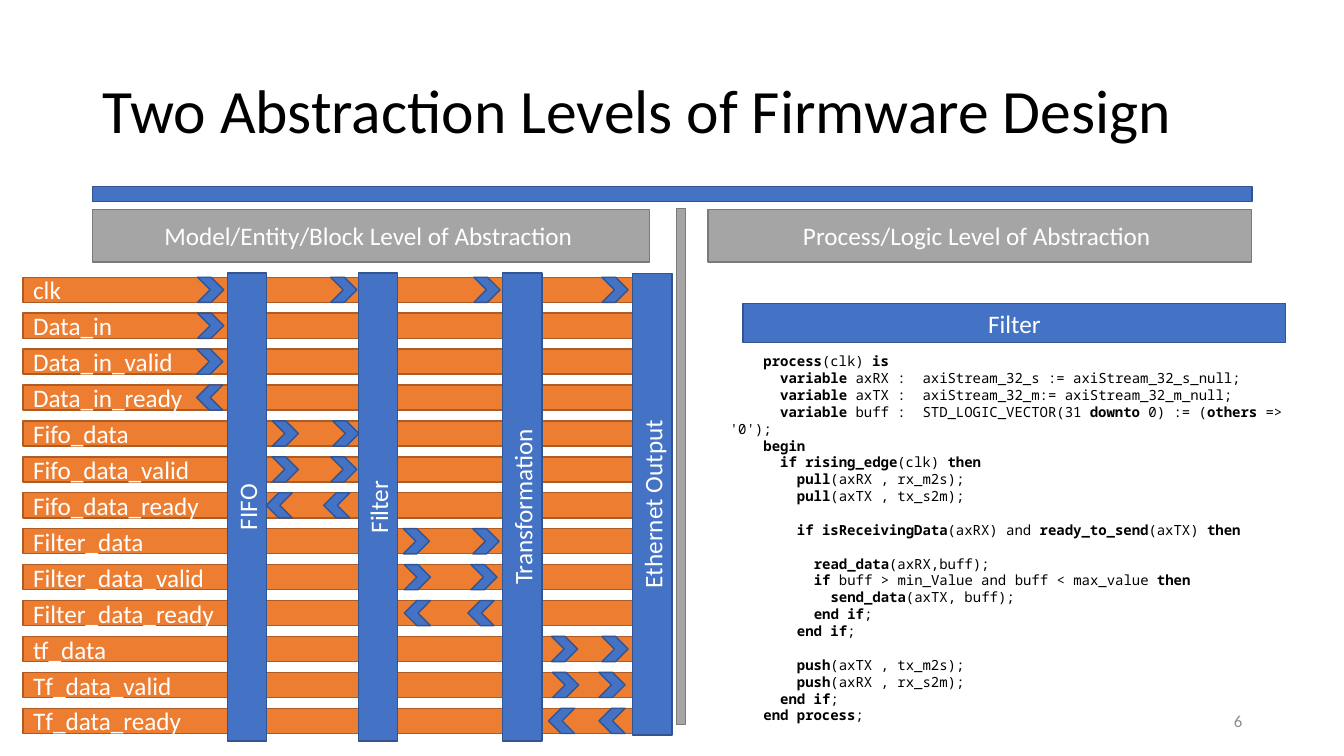
"""Builds the slide on two abstraction levels of firmware design."""
from dataclasses import dataclass

import pptx
import pptx.dml.color
import pptx.enum.shapes
import pptx.enum.text
import pptx.util

Inches, Pt = pptx.util.Inches, pptx.util.Pt
Shape = pptx.enum.shapes.MSO_SHAPE
Align = pptx.enum.text.PP_ALIGN
Anchor = pptx.enum.text.MSO_ANCHOR

TITLE = "Two Abstraction Levels of Firmware Design"
PAGE_NUMBER = "6"
HEADERS = [
    ("Model/Entity/Block Level of Abstraction ", 0.92, 5.52),
    ("Process/Logic Level of Abstraction ", 7.02, 5.39),
]
FORWARD, BACKWARD = 0, 180
SIGNALS = [
    ("clk", FORWARD, [1.96, 3.28, 4.7, 5.97]),
    ("Data_in", FORWARD, [1.96]),
    ("Data_in_valid", FORWARD, [1.95]),
    ("Data_in_ready", BACKWARD, [1.95]),
    ("Fifo_data", FORWARD, [2.7, 3.3]),
    ("Fifo_data_valid", FORWARD, [2.7, 3.28]),
    ("Fifo_data_ready", BACKWARD, [2.64, 3.21]),
    ("Filter_data", FORWARD, [4, 4.69]),
    ("Filter_data_valid", FORWARD, [4.01, 4.67]),
    ("Filter_data_ready", BACKWARD, [4.01, 4.64]),
    ("tf_data", FORWARD, [5.47, 5.97]),
    ("Tf_data_valid", FORWARD, [5.48, 5.94]),
    ("Tf_data_ready", BACKWARD, [5.44, 5.94]),
]
BLOCKS = [
    ("FIFO", 2.45, 4.64),
    ("Filter", 3.75, 4.64),
    ("Transformation", 5.18, 4.64),
    ("Ethernet Output", 6.47, 4.58),
]
CODE_TITLE = "Filter"
CODE = [
    (4, 0, "*process*(clk) *is*"),
    (6, 0, "*variable* axRX :  axiStream_32_s := axiStream_32_s_null;"),
    (6, 0, "*variable* axTX :  axiStream_32_m:= axiStream_32_m_null;"),
    (6, 0, "*variable* buff :  STD_LOGIC_VECTOR(31 *downto* 0) := (*others* => '0');"),
    (4, 0, "*begin*"),
    (6, 0, "*if rising_edge*(clk) *then*"),
    (8, 0, "*pull*(axRX , rx_m2s);"),
    (8, 0, "*pull*(axTX , tx_s2m);"),
    (8, 1, "*if isReceivingData*(axRX) and *ready_to_send*(axTX) *then*"),
    (10, 1, "*read_data*(axRX,buff);"),
    (10, 0, "*if* buff > min_Value and buff < max_value *then*"),
    (12, 0, "*send_data*(axTX, buff);"),
    (10, 0, "*end if*;"),
    (8, 0, "*end if*;"),
    (8, 1, "*push*(axTX , tx_m2s);"),
    (8, 0, "*push*(axRX , rx_s2m);"),
    (6, 0, "*end if*;"),
    (4, 0, "*end process*;"),
]


@dataclass(frozen=True)
class Theme:
    """Colours, fonts and type sizes."""
    blue: tuple = ("4472C4", "325491")
    orange: tuple = ("ED7D31", "AF5C24")
    gray: tuple = ("A5A5A5", "7A7A7A")
    white: str = "FFFFFF"
    black: str = "000000"
    muted: str = "8C8C8C"
    sans: str = "Calibri"
    mono: str = "Noto Sans Mono"
    title: int = 44
    label: int = 18
    footer: int = 12
    code: int = 10


THEME = Theme()
ROW_TOP, ROW_PITCH, ROW_HEIGHT = 2.75, 3.92 / 11, 0.25
CHEVRON_WIDTH, BLOCK_WIDTH, BLOCK_TOP = 0.26, 0.39, 2.71
CODE_LINE, CODE_CHARACTER = Pt(12.04), Pt(6)


def rgb(value):
    return pptx.dml.color.RGBColor.from_string(value)


def style(para, size, color, font=THEME.sans):
    para.font.size = Pt(size)
    para.font.name = font
    para.font.color.rgb = rgb(color)


def write(box, text, size, color, align):
    frame = box.text_frame
    frame.word_wrap = True
    frame.vertical_anchor = Anchor.MIDDLE
    para = frame.paragraphs[0]
    para.text = text
    para.alignment = align
    style(para, size, color)
    return para


def add_block(page, place, colors, text="", align=Align.CENTER, kind=Shape.RECTANGLE, turn=0):
    block = page.shapes.add_shape(kind, *map(Inches, place))
    block.shadow.inherit = False
    block.rotation = turn
    block.fill.solid()
    block.fill.fore_color.rgb = rgb(colors[0])
    block.line.color.rgb = rgb(colors[1])
    block.line.width = Pt(1)
    if text:
        write(block, text, THEME.label, THEME.white, align)


def add_label(page, place, text, size, color, align):
    return write(page.shapes.add_textbox(*map(Inches, place)), text, size, color, align)


def add_diagram(page):
    tops = [ROW_TOP + ROW_PITCH * row for row in range(len(SIGNALS))]
    for top, (name, _, _) in zip(tops, SIGNALS):
        add_block(page, (0.23, top, 6.39, ROW_HEIGHT), THEME.orange, name, Align.LEFT)
    for name, center, length in BLOCKS:
        middle = BLOCK_TOP + length / 2
        place = (center - length / 2, middle - BLOCK_WIDTH / 2, length, BLOCK_WIDTH)
        add_block(page, place, THEME.blue, name, turn=270)
    for top, (_, direction, lefts) in zip(tops, SIGNALS):
        for left in lefts:
            place = (left, top, CHEVRON_WIDTH, ROW_HEIGHT)
            add_block(page, place, THEME.blue, kind=Shape.CHEVRON, turn=direction)


def add_code(page):
    box = page.shapes.add_textbox(*map(Inches, (7.14, 3.45, 5.74, 3.8)))
    frame = box.text_frame
    frame.word_wrap = True
    for number, (indent, gap, line) in enumerate(CODE):
        para = frame.add_paragraph() if number else frame.paragraphs[0]
        style(para, THEME.code, THEME.black, THEME.mono)
        para.line_spacing = CODE_LINE
        para.space_before = CODE_LINE * gap
        properties = para._p.get_or_add_pPr()
        properties.set("marL", "0")
        properties.set("indent", str(CODE_CHARACTER * indent))
        for part, text in enumerate(line.split("*")):
            if text:
                span = para.add_run()
                span.text = text
                span.font.bold = part % 2 == 1


def main():
    deck = pptx.Presentation()
    deck.slide_width, deck.slide_height = Inches(13.33), Inches(7.5)
    page = deck.slides.add_slide(deck.slide_layouts[6])
    add_block(page, (0.92, 1.85, 11.5, 0.15), THEME.blue)
    title = add_label(page, (0.92, 0.4, 11.5, 1.45), TITLE, THEME.title, THEME.black, Align.LEFT)
    title.line_spacing = 0.9
    add_diagram(page)
    add_code(page)
    add_block(page, (7.37, 3.01, 5.38, 0.39), THEME.blue, CODE_TITLE)
    for text, left, width in HEADERS:
        add_block(page, (left, 2.08, width, 0.52), THEME.gray, text)
    add_block(page, (6.71, 2.07, 0.09, 5.12), THEME.gray)
    add_label(page, (9.42, 6.95, 3, 0.4), PAGE_NUMBER, THEME.footer, THEME.muted, Align.RIGHT)
    deck.save("out.pptx")


if __name__ == "__main__":
    main()
